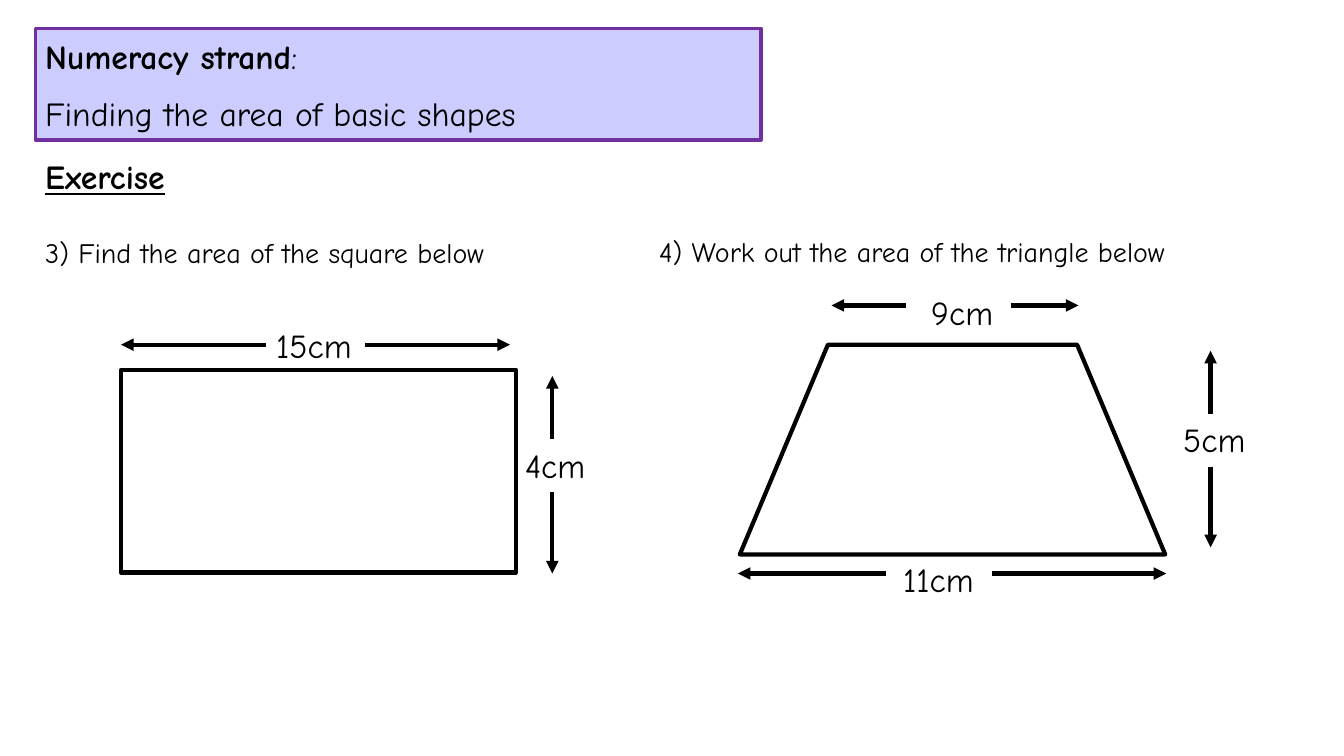
import dataclasses

import lxml.etree
import pptx
import pptx.dml.color
import pptx.enum.shapes
import pptx.enum.text
import pptx.oxml.ns
import pptx.util

SLIDE_WIDTH = pptx.util.Inches(13.33)
SLIDE_HEIGHT = pptx.util.Inches(7.5)
COLUMNS, ROWS = 40, 22.5
LABEL_COLUMNS, LABEL_ROWS = 3.6, 1.5
SHAPES = pptx.enum.shapes.MSO_SHAPE


@dataclasses.dataclass(frozen=True)
class Theme:
    font: str = "Comic Neue"
    ink: str = "000000"
    paper: str = "FFFFFF"
    banner: str = "CCCCFF"
    banner_edge: str = "7030A0"
    large: float = 24
    body: float = 20
    outline: float = 3
    banner_outline: float = 2.25


THEME = Theme()


def across(columns):
    return round(SLIDE_WIDTH * columns / COLUMNS)


def down(rows):
    return round(SLIDE_HEIGHT * rows / ROWS)


def place(left, top, width, height):
    """Turn a position and size in grid cells into lengths."""
    return across(left), down(top), across(width), down(height)


def colour(value):
    return pptx.dml.color.RGBColor.from_string(value)


def style_font(font, size, bold=False, underline=False):
    font.name = THEME.font
    font.size = pptx.util.Pt(size)
    font.color.rgb = colour(THEME.ink)
    font.bold = bold
    font.underline = underline


def add_text(page, area, text, size):
    box = page.shapes.add_textbox(*place(*area))
    box.text_frame.word_wrap = True
    box.text_frame.text = text
    style_font(box.text_frame.paragraphs[0].runs[0].font, size)
    return box


def add_figure(page, kind, area, fill=THEME.paper, edge=THEME.ink, width=THEME.outline):
    figure = page.shapes.add_shape(kind, *place(*area))
    figure.shadow.inherit = False
    figure.fill.solid()
    figure.fill.fore_color.rgb = colour(fill)
    figure.line.color.rgb = colour(edge)
    figure.line.width = pptx.util.Pt(width)
    return figure


def add_arrow(page, start, tip):
    arrow = page.shapes.add_connector(
        pptx.enum.shapes.MSO_CONNECTOR.STRAIGHT,
        across(start[0]), down(start[1]), across(tip[0]), down(tip[1]))
    arrow.line.color.rgb = colour(THEME.ink)
    arrow.line.width = pptx.util.Pt(THEME.outline)
    qualified = pptx.oxml.ns.qn
    lxml.etree.SubElement(arrow.get_or_add_ln(), qualified("a:tailEnd"), type="triangle")
    lxml.etree.SubElement(arrow._element.spPr, qualified("a:effectLst"))


def add_dimension(page, text, label, first, second):
    """Write a measurement with two arrows, each a (start, tip) pair."""
    add_text(page, (*label, LABEL_COLUMNS, LABEL_ROWS), text, THEME.large)
    for start, tip in (first, second):
        add_arrow(page, start, tip)


def add_width(page, text, label, row, first, second):
    add_dimension(page, text, label, *[[(column, row) for column in pair]
                                       for pair in (first, second)])


def add_height(page, text, label, column, first, second):
    add_dimension(page, text, label, *[[(column, row) for row in pair]
                                       for pair in (first, second)])


def add_banner(page):
    banner = add_figure(page, SHAPES.RECTANGLE, (1.05, 0.84, 21.6, 3.33),
                        THEME.banner, THEME.banner_edge, THEME.banner_outline)
    frame = banner.text_frame
    frame.word_wrap = True
    frame.vertical_anchor = pptx.enum.text.MSO_ANCHOR.MIDDLE
    heading, topic = frame.paragraphs[0], frame.add_paragraph()
    for para, texts in ((heading, ("Numeracy strand", ":")),
                        (topic, ("Finding the area of basic shapes",))):
        para.alignment = pptx.enum.text.PP_ALIGN.LEFT
        for text in texts:
            span = para.add_run()
            span.text = text
            style_font(span.font, THEME.large)
    heading.runs[0].font.bold = True
    topic.space_before = pptx.util.Pt(THEME.large / 2)


def add_exercise(page):
    box = add_text(page, (1.05, 4.5, 17.64, 3.75), "Exercise", THEME.large)
    title = box.text_frame.paragraphs[0]
    style_font(title.runs[0].font, THEME.large, bold=True, underline=True)
    question = box.text_frame.add_paragraph()
    question.text = "3) Find the area of the square below"
    question.space_before = pptx.util.Pt(28)
    style_font(question.runs[0].font, THEME.body)


def add_rectangle_task(page):
    add_exercise(page)
    add_figure(page, SHAPES.RECTANGLE, (3.6, 11.01, 11.76, 6.03))
    add_width(page, "15cm", (7.92, 9.51), 10.26, (7.92, 3.6), (10.86, 15.18))
    add_height(page, "4cm", (15.33, 13.08), 16.44, (13.08, 11.19), (14.64, 17.07))


def add_trapezoid_task(page):
    add_text(page, (19.32, 6.84, 17.37, 1.32),
             "4) Work out the area of the triangle below", THEME.body)
    trapezoid = add_figure(page, SHAPES.TRAPEZOID, (22.02, 10.26, 12.66, 6.24))
    trapezoid.adjustments[0] = 0.42
    add_width(page, "9cm", (27.42, 8.55), 9.09, (26.97, 24.75), (30.09, 32.1))
    add_width(page, "11cm", (26.58, 16.5), 17.07, (26.37, 21.96), (29.52, 34.71))
    add_height(page, "5cm", (34.92, 12.33), 36.03, (12.33, 10.44), (13.89, 16.29))


def main():
    deck = pptx.Presentation()
    deck.slide_width, deck.slide_height = SLIDE_WIDTH, SLIDE_HEIGHT
    page = deck.slides.add_slide(deck.slide_layouts[6])
    add_banner(page)
    add_rectangle_task(page)
    add_trapezoid_task(page)
    deck.save("out.pptx")


if __name__ == "__main__":
    main()
